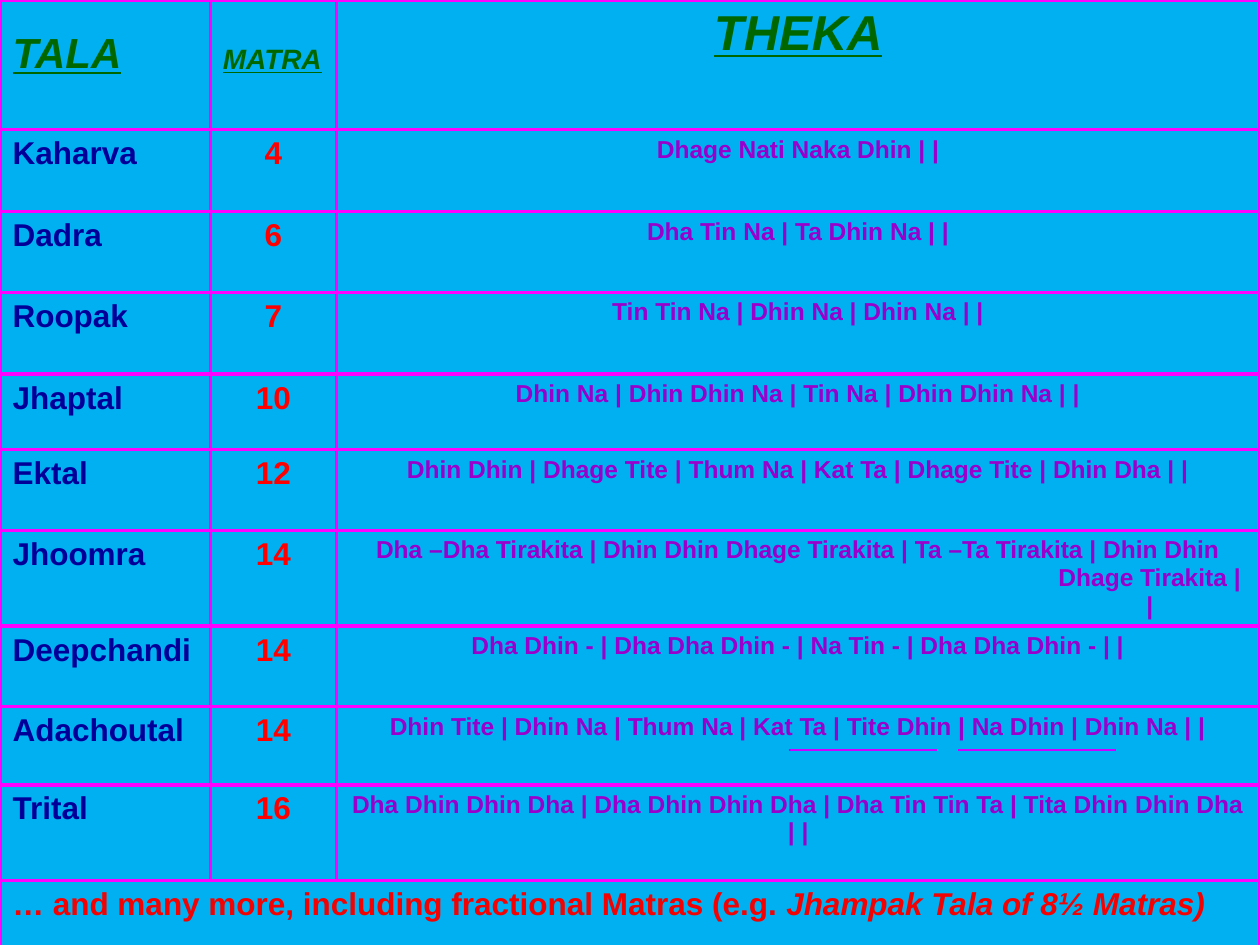
from lxml import etree
from pptx import Presentation
from pptx.dml.color import RGBColor
from pptx.enum.shapes import MSO_CONNECTOR
from pptx.enum.text import PP_ALIGN
from pptx.oxml.ns import qn
from pptx.util import Inches, Pt

LEFT, CENTER = PP_ALIGN.LEFT, PP_ALIGN.CENTER
STRAIGHT = MSO_CONNECTOR.STRAIGHT

SKY = RGBColor(0x00, 0xB0, 0xF0)
MAGENTA = RGBColor(0xFF, 0x00, 0xFF)
GREEN = RGBColor(0x00, 0x66, 0x00)
NAVY = RGBColor(0x00, 0x00, 0x99)
RED = RGBColor(0xFF, 0x00, 0x00)
NOTE_RED = RGBColor(0xF2, 0x02, 0x02)
PURPLE = RGBColor(0x99, 0x00, 0xCC)
VIOLET = RGBColor(0xCC, 0x00, 0xFF)

COLUMN_WIDTHS = [1.67, 1, 7.33]
ROW_HEIGHTS = [1.03, 0.65, 0.64, 0.65, 0.6, 0.64, 0.76, 0.64, 0.62, 0.76, 0.64]

# Heading, size, alignment, top margin
HEADINGS = [
    ("TALA", 24, LEFT, 0.24),
    ("MATRA", 16, LEFT, 0.35),
    ("THEKA", 28, CENTER, 0.05),
]
TALAS = [
    ("Kaharva", "4", "Dhage Nati Naka Dhin | |"),
    ("Dadra", "6", "Dha Tin Na | Ta Dhin Na | |"),
    ("Roopak", "7", "Tin Tin Na | Dhin Na | Dhin Na | |"),
    ("Jhaptal", "10", "Dhin Na | Dhin Dhin Na | Tin Na | Dhin Dhin Na | |"),
    ("Ektal", "12", "Dhin Dhin | Dhage Tite | Thum Na | Kat Ta | Dhage Tite | Dhin Dha | |"),
    ("Jhoomra", "14", "Dha –Dha Tirakita | Dhin Dhin Dhage Tirakita | "
                      "Ta –Ta Tirakita | Dhin Dhin Dhage Tirakita | |"),
    ("Deepchandi", "14", "Dha Dhin - | Dha Dha Dhin - | Na Tin - | Dha Dha Dhin - | |"),
    ("Adachoutal", "14", "Dhin Tite | Dhin Na | Thum Na | Kat Ta | Tite Dhin | Na Dhin | Dhin Na | |"),
    ("Trital", "16", "Dha Dhin Dhin Dha | Dha Dhin Dhin Dha | "
                     "Dha Tin Tin Ta | Tita Dhin Dhin Dha | |"),
]
# Size, colour, alignment of each column
BODY_STYLES = [(18, NAVY, LEFT), (18, RED, CENTER), (14, PURPLE, CENTER)]


class SlideBuilder:
    font_name = "Arial"
    border_width = Pt(2.25)

    def __init__(self, slide):
        self.slide = slide

    def table(self, widths, heights):
        frame = self.slide.shapes.add_table(
            len(heights), len(widths), 0, 0, Inches(sum(widths)), Inches(sum(heights)))
        table = frame.table
        for column, width in zip(table.columns, widths):
            column.width = Inches(width)
        for row, height in zip(table.rows, heights):
            row.height = Inches(height)
        for cell in table.iter_cells():
            self.borders(cell)
            cell.fill.solid()
            cell.fill.fore_color.rgb = SKY
        return table

    def borders(self, cell):
        properties = cell._tc.get_or_add_tcPr()
        for side in ("a:lnL", "a:lnR", "a:lnT", "a:lnB"):
            line = etree.SubElement(properties, qn(side), w=str(self.border_width))
            fill = etree.SubElement(line, qn("a:solidFill"))
            etree.SubElement(fill, qn("a:srgbClr"), val=str(MAGENTA))

    def style(self, span, size, color, italic=False, underline=False):
        font = span.font
        font.name, font.size, font.bold = self.font_name, Pt(size), True
        font.italic, font.underline = italic, underline
        font.color.rgb = color

    def cell_text(self, cell, text, size, color, align, heading=False):
        para = cell.text_frame.paragraphs[0]
        para.text = text
        para.alignment = align
        self.style(para.runs[0], size, color, heading, heading)
        return para

    def line(self, left, right, y, color):
        line = self.slide.shapes.add_connector(
            STRAIGHT, Inches(left), Inches(y), Inches(right), Inches(y))
        line.line.color.rgb = color
        line.line.width = Pt(1)
        etree.SubElement(line._element.spPr, qn("a:effectLst"))


def main():
    deck = Presentation()
    deck.slide_width, deck.slide_height = Inches(10), Inches(7.5)
    builder = SlideBuilder(deck.slides.add_slide(deck.slide_layouts[6]))
    table = builder.table(COLUMN_WIDTHS, ROW_HEIGHTS)

    # Header row
    for column, (text, size, align, top) in enumerate(HEADINGS):
        cell = table.cell(0, column)
        cell.margin_top = Inches(top)
        builder.cell_text(cell, text, size, GREEN, align, heading=True)

    # One row for each tala
    for row, tala in enumerate(TALAS, start=1):
        for column, (text, style) in enumerate(zip(tala, BODY_STYLES)):
            para = builder.cell_text(table.cell(row, column), text, *style)
            if tala[0] == "Jhoomra" and column == 2:
                # Hanging indent for the wrapped theka
                properties = para._p.get_or_add_pPr()
                properties.set("marL", str(Inches(5.58)))
                properties.set("indent", str(Inches(-5.58)))

    # Closing note across all columns
    last = len(ROW_HEIGHTS) - 1
    note = table.cell(last, 0)
    note.merge(table.cell(last, 2))
    para = builder.cell_text(
        note, "… and many more, including fractional Matras (e.g. ", 18, NOTE_RED, LEFT)
    example = para.add_run()
    example.text = "Jhampak Tala of 8½ Matras)"
    builder.style(example, 18, NOTE_RED, italic=True)

    # Lines under the Adachoutal theka
    for left, right in [(6.26, 7.44), (7.6, 8.86)]:
        builder.line(left, right, 5.95, VIOLET)

    deck.save("out.pptx")


if __name__ == "__main__":
    main()
